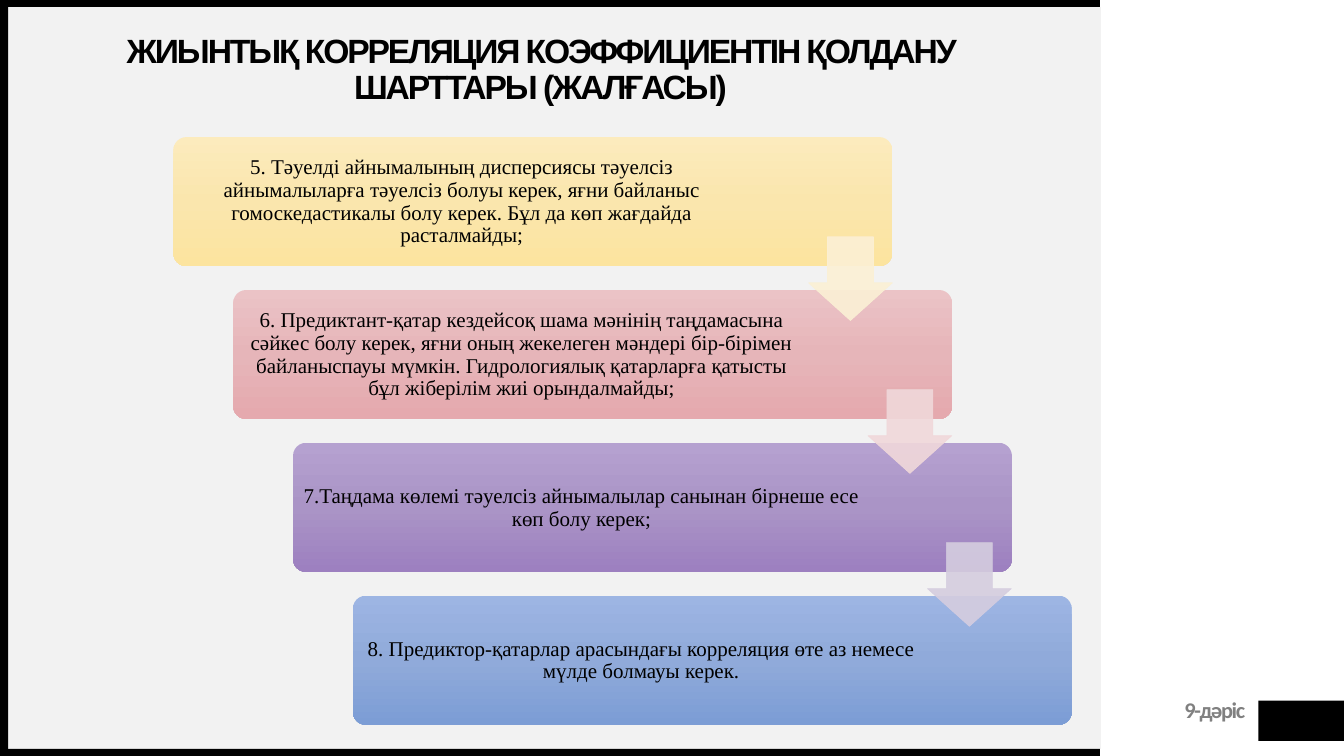
import copy
from typing import NamedTuple

import lxml.etree
import pptx
import pptx.dml.color
import pptx.enum.shapes
import pptx.enum.text
import pptx.oxml.ns
import pptx.util
from pptx.util import Inches, Pt

SHAPE = pptx.enum.shapes.MSO_SHAPE
ALIGN = pptx.enum.text.PP_ALIGN
ANCHOR = pptx.enum.text.MSO_ANCHOR
qn = pptx.oxml.ns.qn


class Box(NamedTuple):
    left: float
    top: float
    width: float
    height: float

    def lengths(self) -> list[int]:
        return [Inches(value) for value in self]


class Condition(NamedTuple):
    text: str
    gradient: tuple[str, str, str]
    arrow_color: str | None


class TextStyle(NamedTuple):
    font: str
    size: float
    color: str
    bold: bool = False
    align: ALIGN = ALIGN.CENTER
    anchor: ANCHOR = ANCHOR.MIDDLE
    line_spacing: float | int = 0.9
    tracking: int = 0  # hundredths of a point
    insets: tuple[float, float, float, float] = (0, 0, 0, 0)


CONDITIONS = [
    Condition("5. Тәуелді айнымалының дисперсиясы тәуелсіз айнымалыларға тәуелсіз болуы керек, "
              "яғни байланыс гомоскедастикалы болу керек. Бұл да көп жағдайда расталмайды;",
              ("FCEBBD", "FAE6AD", "FCE49F"), "FBF0D5"),
    Condition("6. Предиктант-қатар кездейсоқ шама мәнінің таңдамасына сәйкес болу керек, "
              "яғни оның жекелеген мәндері бір-бірімен байланыспауы мүмкін. "
              "Гидрологиялық қатарларға қатысты бұл жіберілім жиі орындалмайды;",
              ("EBC3C6", "E6B5B9", "E5A9AE"), "F0D8DA"),
    Condition("7.Таңдама көлемі тәуелсіз айнымалылар санынан бірнеше есе көп болу керек;",
              ("B5A1D0", "AA94C6", "9D80C0"), "D5CDDF"),
    Condition("8. Предиктор-қатарлар арасындағы корреляция өте аз немесе мүлде болмауы керек.",
              ("9DB5E3", "90AADA", "7C9DD5"), None),
]
TITLE_STYLE = TextStyle("Arial", 24, "000000", bold=True, tracking=-150)
CONDITION_STYLE = TextStyle("Times New Roman", 15, "000000", insets=(0.06, 0.06, 0.06, 0.06))
LECTURE_STYLE = TextStyle("Calibri", 16, "808080", bold=True, align=ALIGN.RIGHT,
                          anchor=ANCHOR.TOP, line_spacing=Pt(14), tracking=-100,
                          insets=(0, 0.04, 0, 0))
FRAME_BARS = [Box(12.48, 6.95, 0.86, 0.4), Box(0, 7.43, 10.91, 0.07),
              Box(0, 0, 10.91, 0.07), Box(0, 0.03, 0.08, 7.47)]
STEP_X = (3.5 - 1.72) / 3
STEP_Y = (5.91 - 1.36) / 3


def rgb(color: str) -> pptx.dml.color.RGBColor:
    return pptx.dml.color.RGBColor.from_string(color)


def write(frame, text: str, style: TextStyle) -> None:
    frame.word_wrap = True
    frame.auto_size = pptx.enum.text.MSO_AUTO_SIZE.NONE
    frame.vertical_anchor = style.anchor
    (frame.margin_left, frame.margin_top,
     frame.margin_right, frame.margin_bottom) = map(Inches, style.insets)
    frame.text = text
    paragraph = frame.paragraphs[0]
    paragraph.alignment = style.align
    paragraph.line_spacing = style.line_spacing
    font = paragraph.font
    font.name, font.size, font.bold = style.font, Pt(style.size), style.bold
    font.color.rgb = rgb(style.color)
    if style.tracking:
        paragraph.runs[0]._r.get_or_add_rPr().set("spc", str(style.tracking))


def add_plain(slide, kind: SHAPE, box: Box, color: str | None = None):
    shape = slide.shapes.add_shape(kind, *box.lengths())
    shape.shadow.inherit = False
    shape.line.fill.background()
    if color:
        shape.fill.solid()
        shape.fill.fore_color.rgb = rgb(color)
    return shape


def add_text(slide, box: Box, text: str, style: TextStyle) -> None:
    write(slide.shapes.add_textbox(*box.lengths()).text_frame, text, style)


def add_card(slide, index: int, condition: Condition) -> None:
    left, top = 1.72 + index * STEP_X, 1.36 + index * STEP_Y
    card = add_plain(slide, SHAPE.ROUNDED_RECTANGLE, Box(left, top, 7.13, 1.28))
    card.adjustments[0] = 0.1
    card.fill.gradient()
    card.fill.gradient_angle = 270
    stop_list = card.element.find(".//" + qn("a:gsLst"))
    stop_list.append(copy.deepcopy(stop_list[-1]))
    for stop, position, color in zip(card.fill.gradient_stops, (0, 0.5, 1), condition.gradient):
        stop.position = position
        stop.color.rgb = rgb(color)
    add_text(slide, Box(left + 0.04, top + 0.04, 5.64, 1.21), condition.text, CONDITION_STYLE)


def add_arrow(slide, index: int, color: str) -> None:
    box = Box(8.02 + index * 0.59, 2.35 + index * STEP_Y, 0.83, 0.83)
    arrow = add_plain(slide, SHAPE.DOWN_ARROW, box, color)
    arrow.adjustments[0] = 0.55
    arrow.adjustments[1] = 0.45
    arrow.line.color.rgb = rgb(color)
    arrow.line.width = Pt(0.5)
    for paint in arrow.element.spPr.findall(".//" + qn("a:srgbClr")):
        lxml.etree.SubElement(paint, qn("a:alpha"), val="90000")


def main() -> None:
    deck = pptx.Presentation()
    deck.slide_width, deck.slide_height = Inches(13.33), Inches(7.5)
    slide = deck.slides.add_slide(deck.slide_layouts[5])

    # Panel, frame and lecture label
    add_plain(slide, SHAPE.RECTANGLE, Box(0.08, 0.07, 10.84, 7.36), "F2F2F2")
    for bar in FRAME_BARS:
        add_plain(slide, SHAPE.RECTANGLE, bar, "000000")
    add_text(slide, Box(10.53, 6.94, 1.82, 0.24), "9-дәріс", LECTURE_STYLE)

    # Title, brought in front of the panel
    title = slide.shapes.title
    title.left, title.top, title.width, title.height = Box(0.61, 0.24, 9.5, 0.92).lengths()
    write(title.text_frame, "ЖИЫНТЫҚ КОРРЕЛЯЦИЯ КОЭФФИЦИЕНТІН ҚОЛДАНУ ШАРТТАРЫ (ЖАЛҒАСЫ)",
          TITLE_STYLE)
    title.element.getparent().append(title.element)

    # Staircase of conditions, then the arrows over it
    for index, condition in enumerate(CONDITIONS):
        add_card(slide, index, condition)
    for index, condition in enumerate(CONDITIONS):
        if condition.arrow_color:
            add_arrow(slide, index, condition.arrow_color)

    deck.save("out.pptx")


if __name__ == "__main__":
    main()
